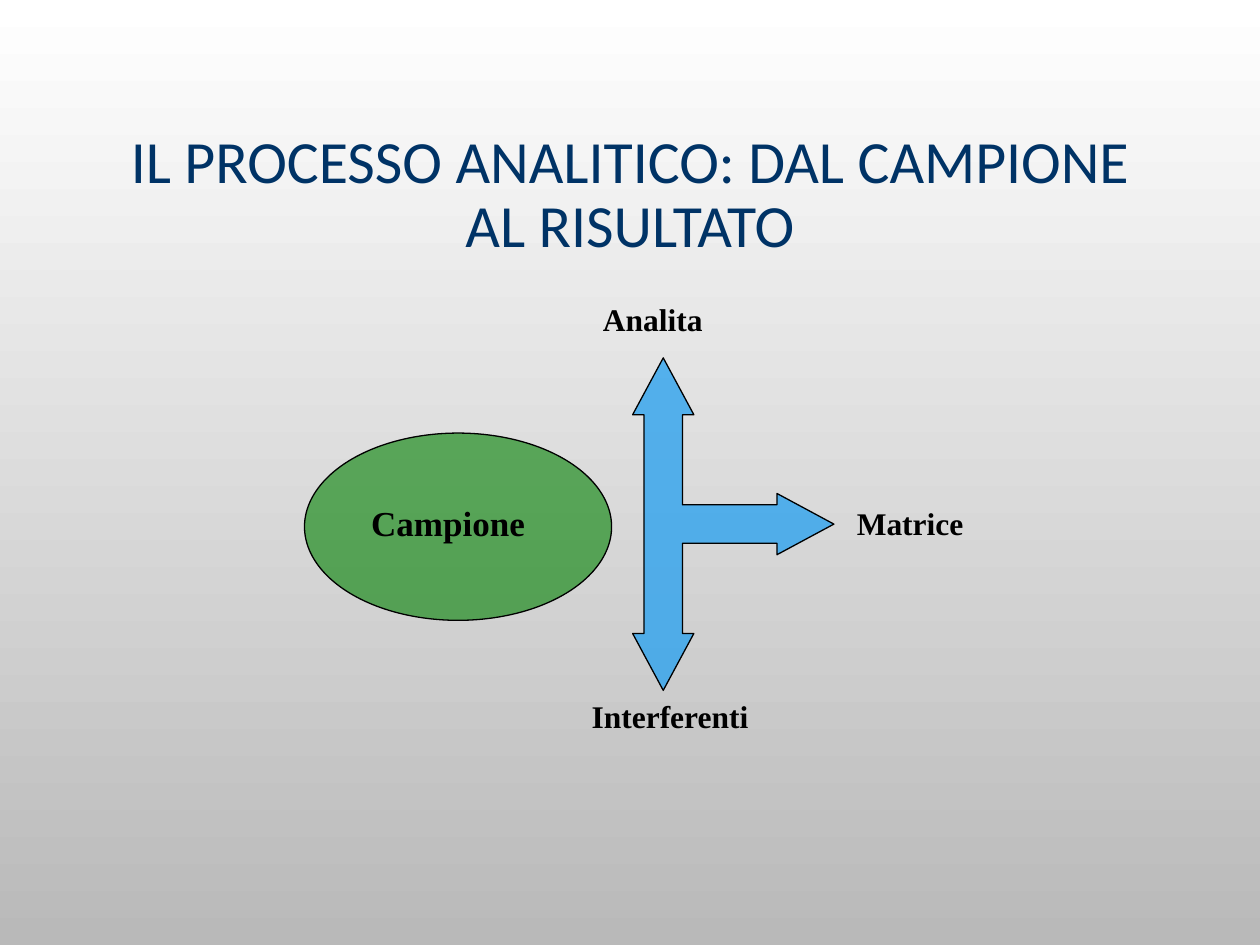
from dataclasses import dataclass
from pptx import Presentation
from pptx.dml.color import RGBColor
from pptx.enum.shapes import MSO_SHAPE
from pptx.enum.text import MSO_ANCHOR, PP_ALIGN
from pptx.oxml.ns import qn
from pptx.util import Pt
from lxml.etree import SubElement


@dataclass(frozen=True)
class Theme:
    top: str = "FFFFFF"
    base: str = "B9B9B9"
    navy: str = "003366"
    green: str = "008000"
    blue: str = "2FA3EE"
    ink: str = "000000"
    head: str = "Calibri"
    body: str = "Times New Roman"
    title: float = 34.2
    large: float = 20
    label: float = 18
    line: float = 0.75


class Board:
    def __init__(self, slide, theme):
        self.slide = slide
        self.theme = theme

    def ground(self):
        fill = self.slide.background.fill
        fill.gradient()
        fill.gradient_angle = 270
        colors = (self.theme.top, self.theme.base)
        for stop, color, place in zip(fill.gradient_stops, colors, (0, 1)):
            stop.color.rgb = RGBColor.from_string(color)
            stop.position = place

    def label(self, text, box, size, wrap=False):
        """Add a text box in the body style and return its shape."""
        shape = self.slide.shapes.add_textbox(*map(Pt, box))
        frame = shape.text_frame
        frame.word_wrap = wrap
        para = frame.paragraphs[0]
        para.text = text
        font = para.font
        font.name, font.size, font.bold = self.theme.body, Pt(size), True
        font.color.rgb = RGBColor.from_string(self.theme.ink)
        return shape

    def title(self, text, box):
        frame = self.label(text, box, self.theme.title, True).text_frame
        frame.vertical_anchor = MSO_ANCHOR.MIDDLE
        para = frame.paragraphs[0]
        para.alignment = PP_ALIGN.CENTER
        para.line_spacing = 0.9
        para.font.name, para.font.bold = self.theme.head, False
        para.font.color.rgb = RGBColor.from_string(self.theme.navy)

    def paint(self, shape, color, alpha):
        """Give a shape a see-through fill (alpha in percent) and an outline."""
        shape.shadow.inherit = False
        shape.fill.solid()
        shape.fill.fore_color.rgb = RGBColor.from_string(color)
        tint = shape.element.spPr.find(qn("a:solidFill"))[0]
        SubElement(tint, qn("a:alpha"), val=str(alpha * 1000))
        shape.line.color.rgb = RGBColor.from_string(self.theme.ink)
        shape.line.width = Pt(self.theme.line)

    def oval(self, box):
        shape = self.slide.shapes.add_shape(MSO_SHAPE.OVAL, *map(Pt, box))
        self.paint(shape, self.theme.green, 60)

    def arrow(self, x, y, rise, reach):
        """Add a three-way arrow: up and down by rise, right by reach."""
        shaft, wing, barb = 11, 17.5, 32.5
        neck = rise - barb
        half = [
            (reach, 0), (reach - barb, wing), (reach - barb, shaft),
            (shaft, shaft), (shaft, neck), (wing, neck),
            (0, rise), (-wing, neck), (-shaft, neck),
        ]
        ring = [(x + a, y - b) for a, b in half]
        ring += [(x + a, y + b) for a, b in half[:0:-1]]
        dots = [(Pt(a), Pt(b)) for a, b in ring]
        pen = self.slide.shapes.build_freeform(*dots[0])
        pen.add_line_segments(dots[1:], close=True)
        self.paint(pen.convert_to_shape(), self.theme.blue, 80)


def main():
    deck = Presentation()
    deck.slide_width, deck.slide_height = Pt(720), Pt(540)
    theme = Theme()
    board = Board(deck.slides.add_slide(deck.slide_layouts[6]), theme)
    board.ground()
    board.title("IL PROCESSO ANALITICO: DAL CAMPIONE\vAL RISULTATO",
                (54, 49, 612, 126))
    board.oval((174, 247.5, 175.5, 107))
    board.label("Campione", (205, 283, 108, 31), theme.large, True)
    board.arrow(379, 299.5, 95, 97.5)
    for text, left, top, width in (
        ("Analita", 337.5, 168, 71.5),
        ("Matrice", 482.5, 284.5, 75.5),
        ("Interferenti", 331, 394.5, 104.5),
    ):
        board.label(text, (left, top, width, 29), theme.label)
    deck.save("out.pptx")


if __name__ == "__main__":
    main()
